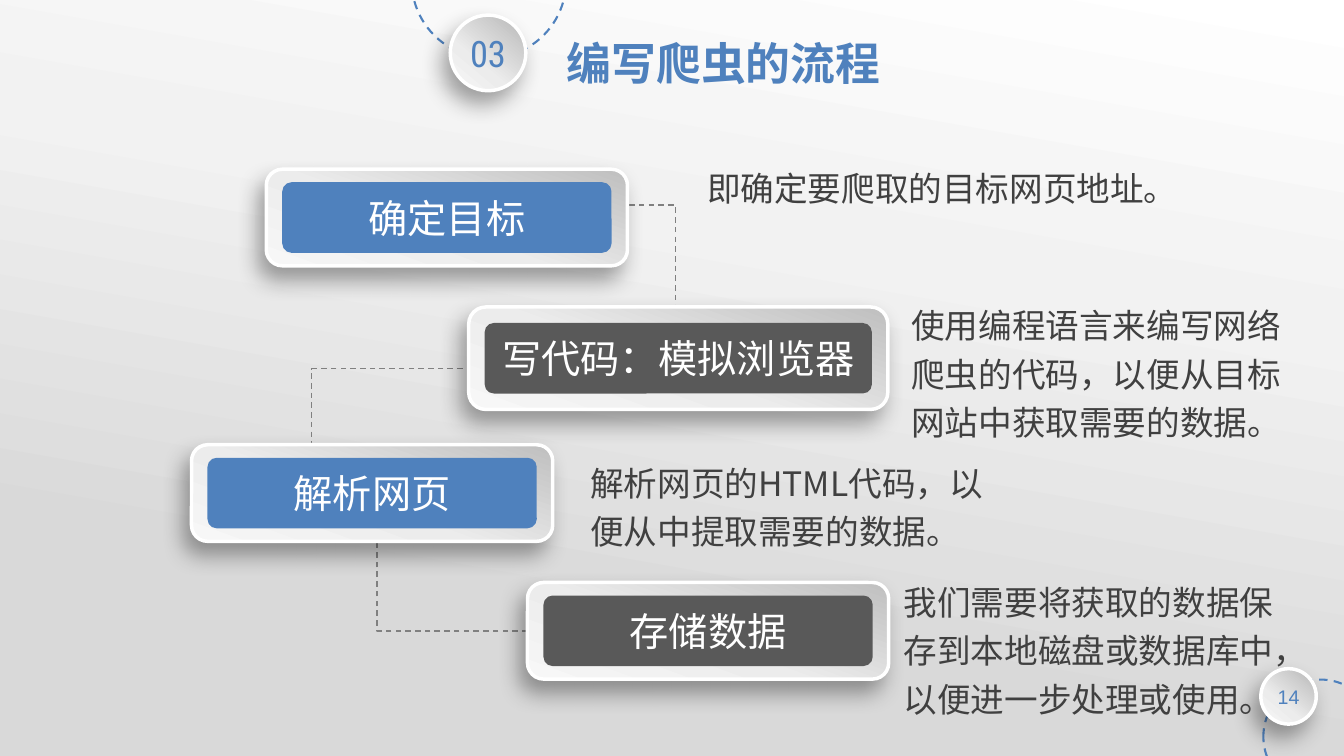
from lxml.etree import SubElement
from pptx import Presentation
from pptx.dml.color import RGBColor
from pptx.enum.dml import MSO_LINE
from pptx.enum.shapes import MSO_SHAPE as SHAPE
from pptx.enum.text import MSO_ANCHOR as ANCHOR, PP_ALIGN as ALIGN
from pptx.oxml.ns import qn
from pptx.util import Inches, Pt

WIDTH, HEIGHT = Inches(13.333), Inches(7.5)
COLS, ROWS = 160, 90
COL, ROW = WIDTH / COLS, HEIGHT / ROWS

WHITE = RGBColor(0xFF, 0xFF, 0xFF)
BLUE = RGBColor(0x4F, 0x81, 0xBD)
CHARCOAL = RGBColor(0x59, 0x59, 0x59)
INK = RGBColor(0x40, 0x40, 0x40)
ROUTE_GREY = RGBColor(0x80, 0x80, 0x80)
SHADOW = RGBColor(0x1A, 0x1A, 0x1A)
MIST = RGBColor(0xF2, 0xF2, 0xF2)
SILVER = RGBColor(0xD9, 0xD9, 0xD9)
PALE = RGBColor(0xF7, 0xF7, 0xF7)
LIGHT = RGBColor(0xEC, 0xEC, 0xEC)
BADGE_GREY = RGBColor(0xBE, 0xBE, 0xBE)
PANEL_GREY = RGBColor(0xBF, 0xBF, 0xBF)

BACKDROP_STOPS = [(0, WHITE), (34, MIST), (76, SILVER)]
BADGE_STOPS = [(9, BADGE_GREY), (63, LIGHT), (100, PALE)]
PANEL_STOPS = [(0, PANEL_GREY), (56, LIGHT), (100, PALE)]

SANS, CJK, CONDENSED = "Arial", "Noto Sans CJK SC", "Roboto Condensed"

FIRST_ROW, ROW_STEP = 20.15, 16.4
STEPS = [
    ("确定目标", BLUE, (31.7, 43, 11.5),
     "即确定要爬取的目标网页地址。", SANS, (83, 18.5, 55.6, 6.5)),
    ("写代码：模拟浏览器", CHARCOAL, (55.8, 49.9, 12.2),
     "使用编程语言来编写网络爬虫的代码，以便从目标网站中获取需要的数据。",
     CJK, (107.3, 34.8, 47.6, 18.1)),
    ("解析网页", BLUE, (22.8, 43, 11.5),
     "解析网页的HTML代码，以便从中提取需要的数据。", CJK, (69.1, 53.5, 49.9, 12.4)),
    ("存储数据", CHARCOAL, (62.8, 43, 11.5),
     "我们需要将获取的数据保存到本地磁盘或数据库中，以便进一步处理或使用。",
     CJK, (106.4, 67.7, 49.9, 18.1)),
]
ROUTES = [
    ((74.9, 24.4), (80.4, 37.3)),
    ((57.4, 43.9), (37.1, 54.4)),
    ((62.8, 75.1), (44.9, 64.4)),
]


def to_emu(box):
    left, top, width, height = box
    return [round(n) for n in (left * COL, top * ROW, width * COL, height * ROW)]


def add_plain_shape(slide, preset, box):
    shape = slide.shapes.add_shape(preset, *to_emu(box))
    shape.shadow.inherit = False
    shape.line.fill.background()
    return shape


def set_gradient(shape, stops, angle):
    shape.fill.gradient()
    gradient = shape._element.spPr.find(qn("a:gradFill"))
    stop_list = gradient.find(qn("a:gsLst"))
    stop_list.clear()
    for position, color in stops:
        stop = SubElement(stop_list, qn("a:gs"), pos=str(position * 1000))
        SubElement(stop, qn("a:srgbClr"), val=str(color))
    gradient.find(qn("a:lin")).set("ang", str(angle * 60000))


def set_line(shape, color, width, dash=None):
    shape.line.color.rgb = color
    shape.line.width = Pt(width)
    if dash:
        shape.line.dash_style = dash


def raise_shape(shape):
    effects = shape._element.spPr.find(qn("a:effectLst"))
    shadow = SubElement(effects, qn("a:outerShdw"), blurRad=str(Pt(16)),
                        dist=str(Pt(10)), dir=str(120 * 60000),
                        algn="ctr", rotWithShape="0")
    color = SubElement(shadow, qn("a:srgbClr"), val=str(SHADOW))
    SubElement(color, qn("a:alpha"), val="40000")


def write(frame, text, size, color, latin, align=ALIGN.CENTER, bold=False):
    paragraph = frame.paragraphs[0]
    paragraph.alignment = align
    run = paragraph.add_run()
    run.text = text
    run.font.size = Pt(size)
    run.font.color.rgb = color
    run.font.bold = bold
    run.font.name = latin
    properties = run._r.get_or_add_rPr()
    properties.set("lang", "zh-CN")
    properties.find(qn("a:latin")).addnext(
        SubElement(properties, qn("a:ea"), typeface=CJK))
    return paragraph


def add_backdrop(slide):
    backdrop = add_plain_shape(slide, SHAPE.RECTANGLE, (0, 0, COLS, ROWS))
    set_gradient(backdrop, BACKDROP_STOPS, 100)
    slide.shapes._spTree.insert(2, backdrop._element)


def add_badge(slide, box, orbit_box, number, size, font):
    orbit = add_plain_shape(slide, SHAPE.OVAL, orbit_box)
    orbit.fill.background()
    set_line(orbit, BLUE, 1.5, MSO_LINE.DASH)
    disc = add_plain_shape(slide, SHAPE.OVAL, box)
    set_gradient(disc, BADGE_STOPS, 130)
    set_line(disc, WHITE, 2.5)
    raise_shape(disc)
    frame = slide.shapes.add_textbox(*to_emu(box)).text_frame
    frame.word_wrap = False
    frame.vertical_anchor = ANCHOR.MIDDLE
    write(frame, number, size, BLUE, font)


def add_heading(slide, box, text):
    title = slide.shapes.title
    title.left, title.top, title.width, title.height = to_emu(box)
    title.text_frame.vertical_anchor = ANCHOR.MIDDLE
    write(title.text_frame, text, 32, BLUE, CJK, bold=True)


def add_route(slide, start, end):
    corner = (end[0], start[1])
    points = [(x * COL, y * ROW) for x, y in (start, corner, end)]
    builder = slide.shapes.build_freeform(*points[0])
    builder.add_line_segments(points[1:], close=False)
    route = builder.convert_to_shape()
    route.shadow.inherit = False
    route.fill.background()
    set_line(route, ROUTE_GREY, 1, MSO_LINE.DASH)


def add_step(slide, box, label, color):
    left, top, width, height = box
    panel = add_plain_shape(slide, SHAPE.ROUNDED_RECTANGLE, box)
    set_gradient(panel, PANEL_STOPS, 110)
    set_line(panel, WHITE, 2.5)
    raise_shape(panel)
    inset, plate_height = 1.9, 8.4
    plate = add_plain_shape(slide, SHAPE.ROUNDED_RECTANGLE, (
        left + inset, top + (height - plate_height) / 2,
        width - 2 * inset, plate_height))
    plate.adjustments[0] = 0.13
    plate.fill.solid()
    plate.fill.fore_color.rgb = color
    plate.text_frame.vertical_anchor = ANCHOR.MIDDLE
    write(plate.text_frame, label, 28, WHITE, SANS)


def add_description(slide, box, text, font):
    frame = slide.shapes.add_textbox(*to_emu(box)).text_frame
    frame.word_wrap = True
    write(frame, text, 24, INK, font, ALIGN.LEFT).line_spacing = 1.2


def build_process_slide(deck):
    slide = deck.slides.add_slide(deck.slide_layouts[5])
    add_backdrop(slide)
    add_badge(slide, (150.1, 79.6, 6.6, 6.6), (150.4, 80.9, 13.6, 13.6),
              "14", 14, SANS)
    add_badge(slide, (53.6, 1.8, 9, 9), (49, -11.5, 18.4, 18.4),
              "03", 26, CONDENSED)
    add_heading(slide, (66.1, 3.6, 40.1, 7.7), "编写爬虫的流程")
    for start, end in ROUTES:
        add_route(slide, start, end)
    for index, (label, color, card, text, font, text_box) in enumerate(STEPS):
        left, width, height = card
        top = FIRST_ROW + index * ROW_STEP
        add_step(slide, (left, top, width, height), label, color)
        add_description(slide, text_box, text, font)


def main():
    deck = Presentation()
    deck.slide_width, deck.slide_height = WIDTH, HEIGHT
    build_process_slide(deck)
    deck.save("out.pptx")


if __name__ == "__main__":
    main()
